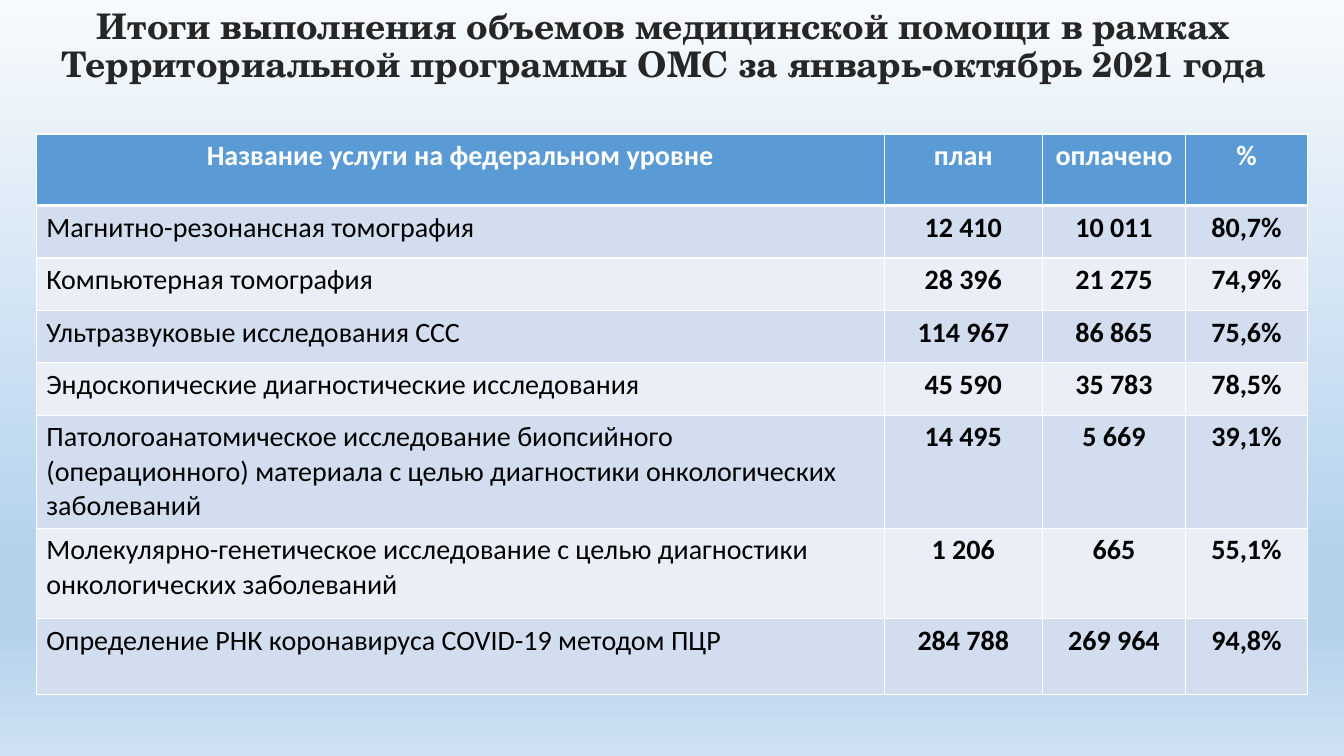
from copy import deepcopy
from typing import NamedTuple

from lxml.etree import SubElement
from pptx import Presentation
from pptx.dml.color import RGBColor
from pptx.enum.text import MSO_ANCHOR, PP_ALIGN
from pptx.oxml.ns import qn
from pptx.util import Inches, Pt

TITLE = ("Итоги выполнения объемов медицинской помощи в рамках "
         "Территориальной программы ОМС за январь-октябрь 2021 года")
BACKGROUND = [(0, "F7FAFD"), (0.74, "B5D2EC"), (0.83, "B5D2EC"), (1, "CEE1F2")]
COLUMN_WIDTHS = [8.41, 1.57, 1.42, 1.21]
HEADER_FILL = "5B9BD5"
BAND_FILLS = ["D2DEEF", "EAEFF7"]
WHITE, BLACK, DARK = "FFFFFF", "000000", "262626"


class Service(NamedTuple):
    height: float
    name: str
    plan: str
    paid: str
    percent: str


ROWS = [
    Service(0.71, "Название услуги на федеральном уровне", "план", "оплачено", "%"),
    Service(0.52, "Магнитно-резонансная томография", "12 410", "10 011", "80,7%"),
    Service(0.52, "Компьютерная томография", "28 396", "21 275", "74,9%"),
    Service(0.52, "Ультразвуковые исследования ССС", "114 967", "86 865", "75,6%"),
    Service(0.52, "Эндоскопические диагностические исследования",
            "45 590", "35 783", "78,5%"),
    Service(1.12, "Патологоанатомическое исследование биопсийного (операционного) "
            "материала с целью диагностики онкологических заболеваний",
            "14 495", "5 669", "39,1%"),
    Service(0.9, "Молекулярно-генетическое исследование с целью диагностики "
            "онкологических заболеваний", "1 206", "665", "55,1%"),
    Service(0.75, "Определение РНК коронавируса COVID-19 методом ПЦР",
            "284 788", "269 964", "94,8%"),
]


def rgb(color: str) -> RGBColor:
    return RGBColor.from_string(color)


def add_text(p, text: str, font: str, size: float, color: str, bold: bool,
             align: PP_ALIGN) -> None:
    p.alignment = align
    r = p.add_run()
    r.text = text
    r.font.name, r.font.size, r.font.bold = font, Pt(size), bold
    r.font.color.rgb = rgb(color)


def set_background(s) -> None:
    fill = s.background.fill
    fill.gradient()
    fill.gradient_angle = 270
    stops = next(s._element.iter(qn("a:gsLst")))
    while len(stops) < len(BACKGROUND):
        stops.append(deepcopy(stops[0]))
    for stop, (position, color) in zip(fill.gradient_stops, BACKGROUND):
        stop.position = position
        stop.color.rgb = rgb(color)


def set_borders(cell, top: float, bottom: float) -> None:
    """White cell borders: 1 pt at the sides, given widths above and below."""
    tc_pr = cell._tc.get_or_add_tcPr()
    for side, width in (("L", 1), ("R", 1), ("T", top), ("B", bottom)):
        ln = SubElement(tc_pr, qn(f"a:ln{side}"), w=str(Pt(width)))
        SubElement(SubElement(ln, qn("a:solidFill")), qn("a:srgbClr"), val=WHITE)


def add_title(s) -> None:
    sp = s.shapes.title
    sp.left, sp.top = Inches(0.36), Inches(0.17)
    sp.width, sp.height = Inches(12.45), Inches(1.03)
    tf = sp.text_frame
    tf.word_wrap = True
    tf.vertical_anchor = MSO_ANCHOR.MIDDLE
    tf.margin_top, tf.margin_bottom = 0, Inches(0.43)
    p = tf.paragraphs[0]
    p.line_spacing = 0.9
    add_text(p, TITLE, "TeX Gyre Schola", 25.2, DARK, True, PP_ALIGN.CENTER)


def add_services_table(s) -> None:
    table = s.shapes.add_table(
        len(ROWS), len(COLUMN_WIDTHS), Inches(0.36), Inches(1.33),
        Inches(sum(COLUMN_WIDTHS)), Inches(sum(row.height for row in ROWS))).table
    for column, width in zip(table.columns, COLUMN_WIDTHS):
        column.width = Inches(width)
    for i, (height, *texts) in enumerate(ROWS):
        table.rows[i].height = Inches(height)
        header = i == 0
        for j, text in enumerate(texts):
            cell = table.cell(i, j)
            set_borders(cell, top=3 if i == 1 else 1, bottom=3 if header else 1)
            cell.fill.solid()
            cell.fill.fore_color.rgb = rgb(HEADER_FILL if header else BAND_FILLS[(i - 1) % 2])
            strong = header or j > 0
            add_text(cell.text_frame.paragraphs[0], text, "Calibri", 20,
                     WHITE if header else BLACK, strong,
                     PP_ALIGN.CENTER if strong else PP_ALIGN.LEFT)


def main() -> None:
    prs = Presentation()
    prs.slide_width, prs.slide_height = Inches(13.33), Inches(7.5)
    s = prs.slides.add_slide(prs.slide_layouts[5])
    set_background(s)
    add_title(s)
    add_services_table(s)
    prs.save("out.pptx")


if __name__ == "__main__":
    main()
